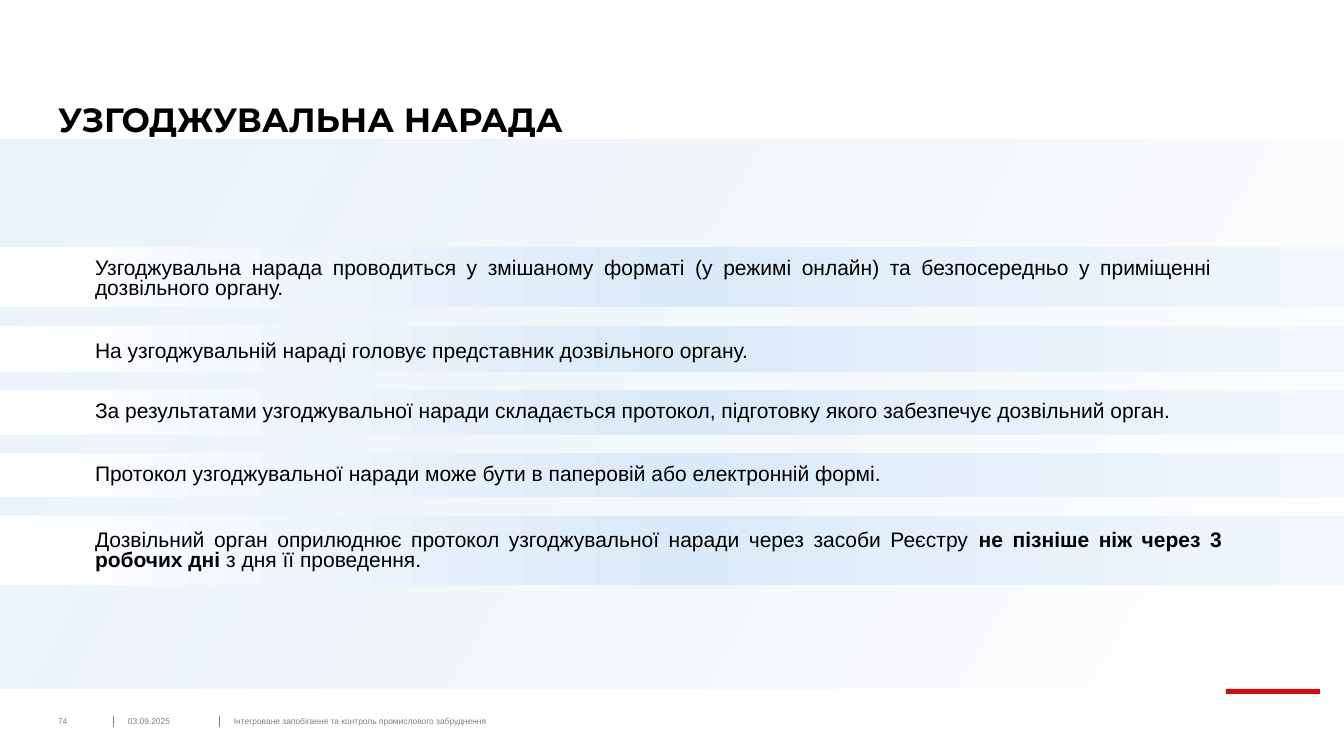
"""Build the slide about the conciliation meeting."""
from dataclasses import dataclass
from typing import Optional

import lxml.etree
import pptx
import pptx.dml.color
import pptx.enum.shapes
import pptx.enum.text
import pptx.oxml.ns
import pptx.util

EMU_PER_PX = 914400 / 100.8
WIDTH, HEIGHT = 1344, 756
BLACK, GREY, RED = "000000", "7F7F7F", "C80F0F"
ANCHOR = pptx.enum.text.MSO_ANCHOR
ALIGN = pptx.enum.text.PP_ALIGN


@dataclass(frozen=True)
class Area:
    left: int
    top: int
    width: int
    height: int


@dataclass(frozen=True)
class Stop:
    percent: int
    colour: str
    opacity: int = 100


@dataclass(frozen=True)
class Span:
    text: str
    bold: bool = False


@dataclass(frozen=True)
class Band:
    top: int
    height: int
    text_top: int
    text_height: int
    spans: tuple[Span, ...]
    text_width: int = 1137


@dataclass(frozen=True)
class FooterItem:
    left: int
    width: int
    text: str


PANEL_STOPS = (Stop(0, "E5F0FA", 73), Stop(100, "FFFFFF"))
BAND_STOPS = (Stop(0, "FFFFFF"), Stop(50, "DBEAF9"), Stop(100, "F1F7FD"))

BANDS = (
    Band(247, 60, 254, 50, (Span(
        "Узгоджувальна нарада проводиться у змішаному форматі (у режимі онлайн) "
        "та безпосередньо у приміщенні дозвільного органу."),)),
    Band(326, 46, 337, 30, (Span(
        "На узгоджувальній нараді головує представник дозвільного органу."),)),
    Band(390, 45, 397, 30, (Span(
        "За результатами узгоджувальної наради складається протокол, "
        "підготовку якого забезпечує дозвільний орган."),)),
    Band(453, 44, 460, 30, (Span(
        "Протокол узгоджувальної наради може бути в паперовій або електронній формі."),)),
    Band(516, 69, 526, 50, (
        Span("Дозвільний орган оприлюднює протокол узгоджувальної наради через засоби Реєстру "),
        Span("не пізніше ніж через 3 робочих дні", True),
        Span(" з дня її проведення.")), 1147),
)

FOOTER = (
    FooterItem(58, 51, "74"),
    FooterItem(128, 80, "03.09.2025"),
    FooterItem(234, 754, "Інтегроване запобігання та контроль промислового забруднення"),
)
DIVIDERS = (114, 220)


def px(length: int) -> pptx.util.Emu:
    return pptx.util.Emu(round(length * EMU_PER_PX))


def rgb(colour: str) -> pptx.dml.color.RGBColor:
    return pptx.dml.color.RGBColor.from_string(colour)


def place(shape, area: Area) -> None:
    shape.left, shape.top = px(area.left), px(area.top)
    shape.width, shape.height = px(area.width), px(area.height)


def set_font(para, name: str, size: int, colour: str, bold: Optional[bool] = None) -> None:
    para.font.name = name
    para.font.size = pptx.util.Pt(size)
    para.font.color.rgb = rgb(colour)
    para.font.bold = bold


def set_frame(frame, anchor, side: int = 0, end: int = 0) -> None:
    frame.word_wrap = True
    frame.auto_size = pptx.enum.text.MSO_AUTO_SIZE.NONE
    frame.vertical_anchor = anchor
    frame.margin_left = frame.margin_right = px(side)
    frame.margin_top = frame.margin_bottom = px(end)


def add_rectangle(page, area: Area):
    shape = page.shapes.add_shape(
        pptx.enum.shapes.MSO_SHAPE.RECTANGLE,
        px(area.left), px(area.top), px(area.width), px(area.height))
    shape.shadow.inherit = False
    shape.line.fill.background()
    return shape


def add_gradient(page, area: Area, stops: tuple[Stop, ...], angle: int = 0) -> None:
    shape = add_rectangle(page, area)
    shape.fill.gradient()
    shape.fill.gradient_angle = angle
    qn = pptx.oxml.ns.qn
    stop_list = shape.element.spPr.find(f"{qn('a:gradFill')}/{qn('a:gsLst')}")
    for old_stop in list(stop_list):
        stop_list.remove(old_stop)
    for stop in stops:
        node = lxml.etree.SubElement(stop_list, qn("a:gs"), pos=str(stop.percent * 1000))
        colour = lxml.etree.SubElement(node, qn("a:srgbClr"), val=stop.colour)
        if stop.opacity < 100:
            lxml.etree.SubElement(colour, qn("a:alpha"), val=str(stop.opacity * 1000))


def add_text_box(page, area: Area):
    return page.shapes.add_textbox(
        px(area.left), px(area.top), px(area.width), px(area.height)).text_frame


def add_band(page, band: Band) -> None:
    add_gradient(page, Area(0, band.top, WIDTH, band.height), BAND_STOPS)
    frame = add_text_box(page, Area(85, band.text_top, band.text_width, band.text_height))
    set_frame(frame, ANCHOR.TOP, side=10, end=5)
    para = frame.paragraphs[0]
    para.alignment = ALIGN.JUSTIFY
    para.line_spacing = 0.8
    set_font(para, "Arial", 15, BLACK)
    for span in band.spans:
        run = para.add_run()
        run.text = span.text
        if span.bold:
            run.font.bold = True


def add_footer_item(page, item: FooterItem) -> None:
    frame = add_text_box(page, Area(item.left, 716, item.width, 10))
    set_frame(frame, ANCHOR.MIDDLE)
    frame.text = item.text
    set_font(frame.paragraphs[0], "Arial", 6, GREY)


def add_divider(page, left: int) -> None:
    line = page.shapes.add_connector(
        pptx.enum.shapes.MSO_CONNECTOR.STRAIGHT, px(left), px(716), px(left), px(727))
    line.line.color.rgb = rgb(GREY)
    line.line.width = pptx.util.Pt(0.75)
    lxml.etree.SubElement(line.element.spPr, pptx.oxml.ns.qn("a:effectLst"))


def set_title(page, text: str) -> None:
    title = page.shapes.title
    place(title, Area(58, 40, 809, 100))
    set_frame(title.text_frame, ANCHOR.BOTTOM)
    title.text_frame.text = text
    para = title.text_frame.paragraphs[0]
    para.alignment = ALIGN.LEFT
    para.line_spacing = 0.9
    set_font(para, "Montserrat", 24, BLACK, bold=True)


def main() -> None:
    deck = pptx.Presentation()
    deck.slide_width, deck.slide_height = px(WIDTH), px(HEIGHT)
    page = deck.slides.add_slide(deck.slide_layouts[5])
    set_title(page, "УЗГОДЖУВАЛЬНА НАРАДА")
    add_gradient(page, Area(0, 140, WIDTH, 549), PANEL_STOPS, angle=330)
    accent = add_rectangle(page, Area(1226, 689, 94, 5))
    accent.fill.solid()
    accent.fill.fore_color.rgb = rgb(RED)
    for left in DIVIDERS:
        add_divider(page, left)
    for item in FOOTER:
        add_footer_item(page, item)
    for band in BANDS:
        add_band(page, band)
    deck.save("out.pptx")


if __name__ == "__main__":
    main()
